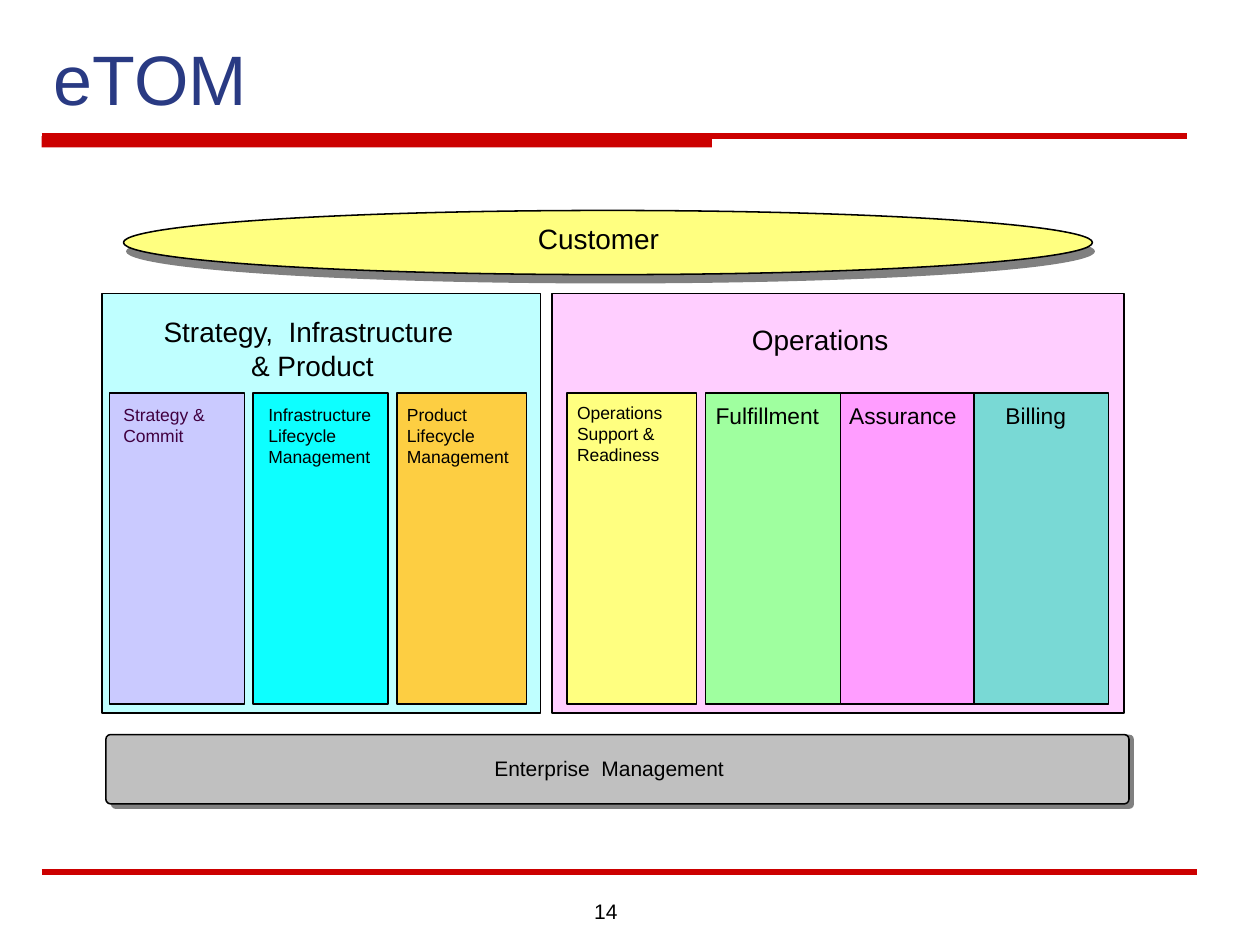
from pptx import Presentation
from pptx.dml.color import RGBColor
from pptx.enum.shapes import MSO_CONNECTOR, MSO_SHAPE
from pptx.enum.text import MSO_ANCHOR, PP_ALIGN
from pptx.oxml.ns import qn
from pptx.util import Inches, Pt
from lxml import etree

RECT, ROUNDED, OVAL = MSO_SHAPE.RECTANGLE, MSO_SHAPE.ROUNDED_RECTANGLE, MSO_SHAPE.OVAL
STRAIGHT = MSO_CONNECTOR.STRAIGHT
LEFT, CENTER, RIGHT = PP_ALIGN.LEFT, PP_ALIGN.CENTER, PP_ALIGN.RIGHT
TOP, BOTTOM = MSO_ANCHOR.TOP, MSO_ANCHOR.BOTTOM
RED, BLACK, SHADOW = "CC0000", "000000", "808080"

prs = Presentation()
prs.slide_width, prs.slide_height = Inches(10), Inches(7.5)
slide = prs.slides.add_slide(prs.slide_layouts[6])


def add_block(kind, left, top, width, height, fill, outline=BLACK):
    block = slide.shapes.add_shape(
        kind, Inches(left), Inches(top), Inches(width), Inches(height))
    block.shadow.inherit = False
    block.fill.solid()
    block.fill.fore_color.rgb = RGBColor.from_string(fill)
    if outline:
        block.line.color.rgb = RGBColor.from_string(outline)
        block.line.width = Pt(0.88)
    else:
        block.line.fill.background()
    if kind == ROUNDED:
        block.adjustments[0] = 0.067


def add_text(text, left, top, width, height, size=16, color=BLACK,
             align=LEFT, anchor=TOP, inset=(0, 0)):
    """Add a text box with one paragraph for each line of the text."""
    box = slide.shapes.add_textbox(
        Inches(left), Inches(top), Inches(width), Inches(height))
    frame = box.text_frame
    frame.word_wrap = True
    frame.vertical_anchor = anchor
    frame.margin_left = frame.margin_right = Inches(inset[0])
    frame.margin_top = frame.margin_bottom = Inches(inset[1])
    frame.text = text
    for paragraph in frame.paragraphs:
        paragraph.alignment = align
        paragraph.font.name = "Arial"
        paragraph.font.size = Pt(size)
        paragraph.font.color.rgb = RGBColor.from_string(color)


# Title, rules and page number
add_block(RECT, 0.33, 1.08, 5.32, 0.09, RED, outline=None)
for rule_y, rule_end in [(1.08, 9.42), (6.92, 9.5)]:
    rule = slide.shapes.add_connector(
        STRAIGHT, Inches(0.33), Inches(rule_y), Inches(rule_end), Inches(rule_y))
    rule.line.color.rgb = RGBColor.from_string(RED)
    rule.line.width = Pt(3)
    etree.SubElement(rule._element.spPr, qn("a:effectLst"))
add_text("eTOM", 0.33, 0.17, 9.25, 0.83, size=40, color="293A83",
         anchor=BOTTOM, inset=(0.1, 0.05))
add_text("14", 4.33, 7.08, 0.67, 0.27, size=12, align=RIGHT, inset=(0.1, 0.05))

# Customer
add_block(OVAL, 1, 1.74, 7.69, 0.51, SHADOW, outline=None)
add_block(OVAL, 0.98, 1.67, 7.69, 0.51, "FFFF80")
add_text("Customer", 4.27, 1.76, 1.04, 0.37)

# Process areas
add_block(RECT, 0.81, 2.33, 3.48, 3.33, "BFFFFF")
add_text("Strategy,  Infrastructure \n& Product", 0.98, 2.5, 3, 0.54, align=CENTER)
add_block(RECT, 4.38, 2.33, 4.54, 3.33, "FFCEFF")
add_text("Operations", 5.96, 2.56, 1.1, 0.27, align=CENTER)

# Process columns: label, left, width, fill, label left, label top, size, label colour
columns = [
    ("Strategy &\nCommit", 0.87, 1.07, "CACAFF", 0.98, 3.21, 10, "400040"),
    ("Infrastructure\nLifecycle\nManagement", 2.01, 1.07, "0DFFFF", 2.13, 3.21, 10, BLACK),
    ("Product\nLifecycle\nManagement", 3.15, 1.03, "FDCE42", 3.23, 3.21, 10, BLACK),
    ("Operations\nSupport &\nReadiness", 4.5, 1.03, "FFFF80", 4.58, 3.19, 10, BLACK),
    ("Fulfillment", 5.6, 1.07, "9FFF9F", 5.68, 3.19, 13, BLACK),
    ("Assurance", 6.67, 1.07, "FF9DFF", 6.74, 3.19, 13, BLACK),
    ("Billing", 7.73, 1.07, "79D9D5", 7.98, 3.19, 13, BLACK),
]
for label, left, width, fill, label_left, label_top, size, color in columns:
    add_block(RECT, left, 3.12, width, 2.47, fill)
    line_count = label.count("\n") + 1
    add_text(label, label_left, label_top, min(0.93, left + width - label_left),
             line_count * size / 60, size=size, color=color)

# Enterprise management
add_block(ROUNDED, 0.88, 5.83, 8.12, 0.59, SHADOW, outline=None)
add_block(ROUNDED, 0.84, 5.83, 8.12, 0.55, "C0C0C0")
add_text("Enterprise  Management", 2.64, 6, 4.39, 0.2, size=12, align=CENTER)

prs.save("out.pptx")
